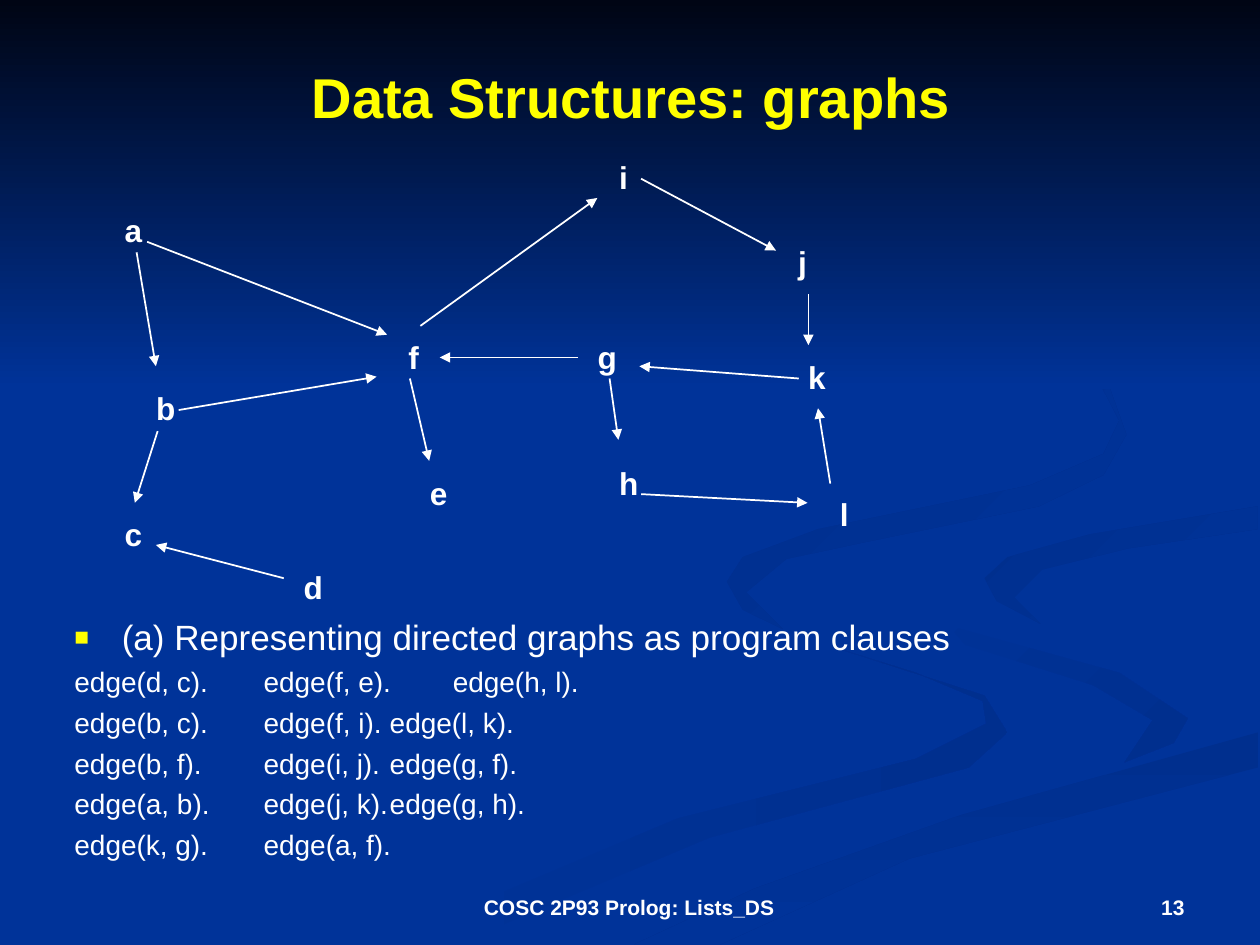
from lxml import etree
from pptx import Presentation
from pptx.dml.color import RGBColor
from pptx.enum.shapes import MSO_CONNECTOR, MSO_SHAPE
from pptx.enum.text import MSO_ANCHOR, MSO_AUTO_SIZE, PP_ALIGN
from pptx.oxml.ns import qn
from pptx.util import Pt

STRAIGHT = MSO_CONNECTOR.STRAIGHT
RECTANGLE = MSO_SHAPE.RECTANGLE
TOP, MIDDLE, BOTTOM = MSO_ANCHOR.TOP, MSO_ANCHOR.MIDDLE, MSO_ANCHOR.BOTTOM
NO_AUTOFIT = MSO_AUTO_SIZE.NONE
LEFT, CENTER, RIGHT = PP_ALIGN.LEFT, PP_ALIGN.CENTER, PP_ALIGN.RIGHT

COLORS = {
    "blue": "003399",
    "night": "000514",
    "ribbon": "002F8E",
    "yellow": "FFFF00",
    "white": "FFFFFF",
}
RGB = {name: RGBColor.from_string(value) for name, value in COLORS.items()}
WIDTH, HEIGHT = 719.28, 539.28


def fill_gradient(shape, start, end, clockwise_angle):
    shape.shadow.inherit = False
    shape.line.fill.background()
    shape.fill.gradient()
    shape.fill.gradient_angle = 360 - clockwise_angle
    for stop, color in zip(shape.fill.gradient_stops, (start, end)):
        stop.color.rgb = RGB[color]


def write(paragraph, text, size, color="white", bold=False, align=LEFT):
    paragraph.text = text
    paragraph.alignment = align
    paragraph.font.name = "Arial"
    paragraph.font.size = Pt(size)
    paragraph.font.bold = bold
    paragraph.font.color.rgb = RGB[color]


prs = Presentation()
prs.slide_width, prs.slide_height = Pt(WIDTH), Pt(HEIGHT)
slide = prs.slides.add_slide(prs.slide_layouts[1])
shapes = slide.shapes
slide.background.fill.solid()
slide.background.fill.fore_color.rgb = RGB["blue"]

# Background ribbons: start colour, end colour, angle, outline
ribbons = [
    ("blue", "ribbon", 0, [
        (475, 369), (523, 384), (561, 400), (563, 413), (523, 433), (387, 467),
        (216, 539), (260, 539), (405, 478), (553, 438), (575, 418), (562, 397)]),
    ("blue", "ribbon", 45, [
        (678, 410), (639, 384), (545, 358), (521, 333), (551, 368),
        (624, 391), (658, 411), (642, 435), (670, 424)]),
    ("ribbon", "blue", 90, [
        (362, 539), (411, 539), (519, 490), (718, 438), (718, 418), (549, 465), (431, 507)]),
    ("ribbon", "blue", 45, [
        (562, 330), (569, 343), (594, 356), (579, 341), (595, 325),
        (644, 313), (718, 302), (718, 289), (622, 305), (575, 318)]),
    ("ribbon", "blue", 45, [
        (491, 310), (593, 289), (630, 271), (643, 248), (633, 220), (626, 215),
        (639, 240), (630, 259), (588, 277), (467, 302), (424, 318), (415, 332),
        (424, 348), (447, 359), (426, 338), (449, 319)]),
]
for start, end, angle, outline in ribbons:
    builder = shapes.build_freeform(*outline[0], scale=Pt(1))
    builder.add_line_segments(outline[1:], close=True)
    fill_gradient(builder.convert_to_shape(), start, end, angle)

night_sky = shapes.add_shape(RECTANGLE, 0, 0, Pt(WIDTH), Pt(221.8))
fill_gradient(night_sky, "night", "blue", 90)

# Title and clauses, brought in front of the background
title, body = shapes.title, slide.placeholders[1]
for placeholder, box, anchor in [
    (title, (36.7, 15.1, 647.3, 79.2), MIDDLE),
    (body, (35.3, 347.8, 635.8, 138.2), TOP),
]:
    shapes.element.append(placeholder.element)
    placeholder.left, placeholder.top, placeholder.width, placeholder.height = map(Pt, box)
    placeholder.text_frame.auto_size = NO_AUTOFIT
    placeholder.text_frame.vertical_anchor = anchor
write(title.text_frame.paragraphs[0], "Data Structures: graphs", 32, "yellow", True, CENTER)

heading = body.text_frame.paragraphs[0]
heading_props = heading._p.get_or_add_pPr()
heading_props.set("marL", str(Pt(27)))
heading_props.set("indent", str(Pt(-27)))
bullet_color = etree.SubElement(heading_props, qn("a:buClr"))
etree.SubElement(bullet_color, qn("a:srgbClr"), val=COLORS["yellow"])
etree.SubElement(heading_props, qn("a:buSzPct"), val="70000")
etree.SubElement(heading_props, qn("a:buFont"), typeface="Arial")
etree.SubElement(heading_props, qn("a:buChar"), char="■")
write(heading, "(a) Representing directed graphs as program clauses", 20)
heading.space_before = Pt(4)

clause_rows = [
    "edge(d, c).\tedge(f, e).\tedge(h, l).",
    "edge(b, c).\tedge(f, i).\tedge(l, k).",
    "edge(b, f).\tedge(i, j).\tedge(g, f).",
    "edge(a, b).\tedge(j, k).\tedge(g, h).",
    "edge(k, g).\tedge(a, f).",
]
for clauses in clause_rows:
    row = body.text_frame.add_paragraph()
    row_props = row._p.get_or_add_pPr()
    row_props.set("marL", "0")
    row_props.set("indent", "0")
    etree.SubElement(row_props, qn("a:buNone"))
    tab_list = etree.SubElement(row_props, qn("a:tabLst"))
    for column in (99, 243):
        etree.SubElement(tab_list, qn("a:tab"), pos=str(Pt(column)), algn="l")
    write(row, clauses, 16)
    row.space_before = Pt(4)

# Node labels and footer: text, left, top, width, height, size, alignment, anchor
nodes = {
    "a": (64, 119.5), "b": (82, 221), "c": (64, 293), "d": (166.3, 323.3),
    "f": (226, 191.5), "e": (238.3, 269.3), "g": (334, 191.5), "h": (346.3, 263.5),
    "l": (472.3, 281.5), "k": (454.3, 203), "j": (448.5, 137.5), "i": (346.3, 89.3),
}
labels = [(node, *place, 27, 26.6, 18, LEFT, TOP) for node, place in nodes.items()]
labels += [
    ("13", 515.5, 491, 167.8, 37.4, 12, RIGHT, BOTTOM),
    ("COSC 2P93 Prolog: Lists_DS", 245.5, 491, 227.5, 37.4, 12, CENTER, BOTTOM),
]
for text, left, top, width, height, size, align, anchor in labels:
    label = shapes.add_textbox(Pt(left), Pt(top), Pt(width), Pt(height)).text_frame
    label.word_wrap = True
    label.vertical_anchor = anchor
    write(label.paragraphs[0], text, size, bold=True, align=align)
    label.paragraphs[0].line_spacing = 0.9

# Directed edges: start x, start y, end x, end y
edges = {
    "dc": (162, 330, 89, 311),
    "bc": (90, 246, 77, 287),
    "ab": (78, 144, 89, 209),
    "af": (84, 138, 221, 191),
    "bf": (102, 234, 215, 215),
    "fe": (234, 216, 245, 263),
    "gf": (330, 204, 251, 204),
    "fi": (240, 186, 341, 113),
    "ij": (366, 102, 443, 143),
    "jk": (461.5, 168, 461.5, 197),
    "lk": (474, 276, 467, 233),
    "kg": (456, 216, 365, 209),
    "gh": (348, 216, 353, 251),
    "hl": (366, 282, 461, 287),
}
for ends in edges.values():
    arrow = shapes.add_connector(STRAIGHT, *map(Pt, ends))
    arrow.line.color.rgb = RGB["white"]
    arrow.line.width = Pt(1)
    etree.SubElement(arrow.line._get_or_add_ln(), qn("a:tailEnd"), type="triangle")
    etree.SubElement(arrow._element.spPr, qn("a:effectLst"))

prs.save("out.pptx")
